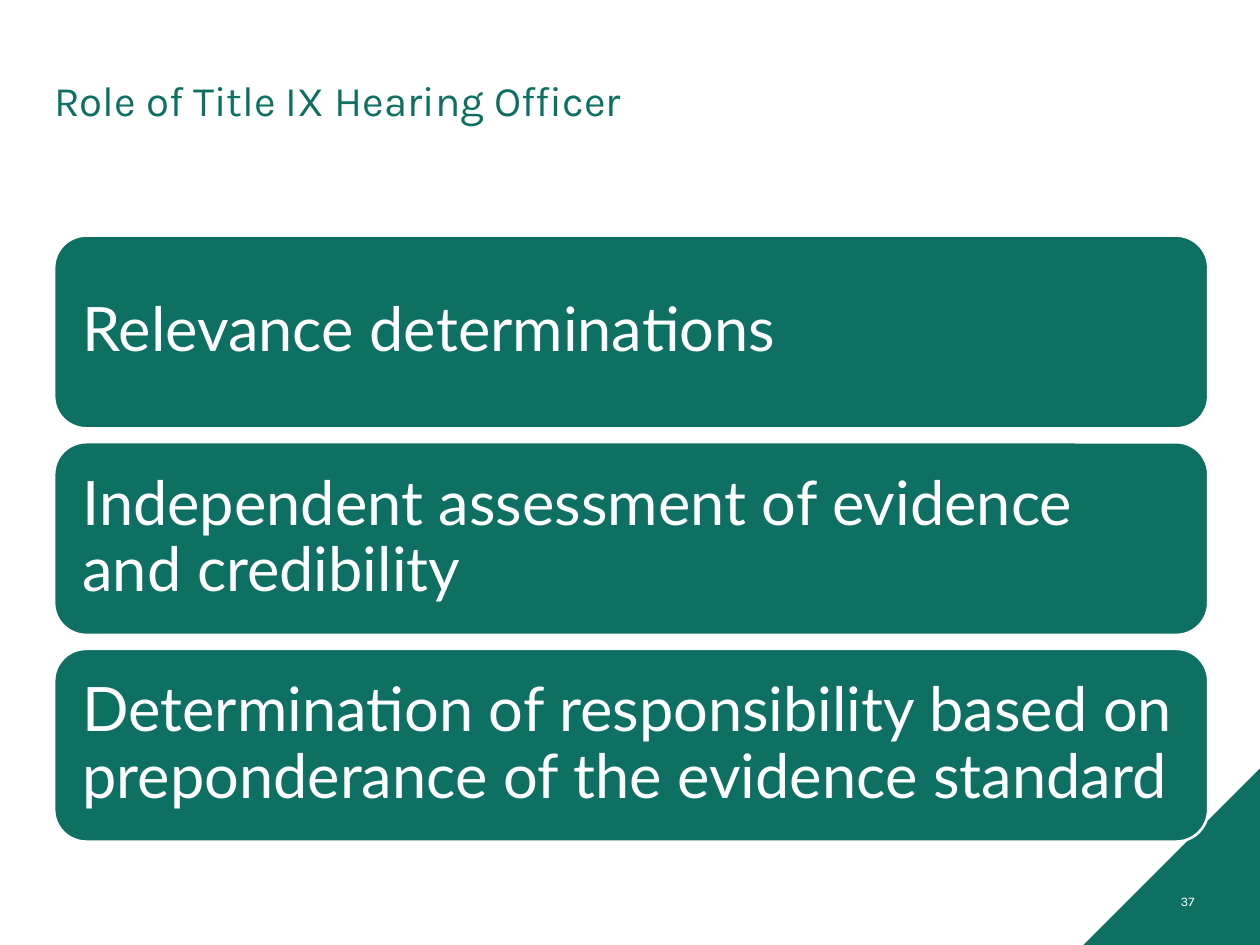
"""Build the slide on the role of a Title IX hearing officer."""
from pptx import Presentation
from pptx.dml.color import RGBColor
from pptx.enum.shapes import MSO_SHAPE
from pptx.enum.text import MSO_ANCHOR, PP_ALIGN
from pptx.util import Inches, Pt

TITLE = "Role of Title IX Hearing Officer"
DUTIES = [
    "Relevance determinations",
    "Independent assessment of evidence and credibility",
    "Determination of responsibility based on preponderance of the evidence standard",
]
PAGE_NUMBER = "37"

GREEN = RGBColor(0x0D, 0x70, 0x62)
WHITE = RGBColor(0xFF, 0xFF, 0xFF)
ROUNDED, TRIANGLE = MSO_SHAPE.ROUNDED_RECTANGLE, MSO_SHAPE.RIGHT_TRIANGLE
MIDDLE = MSO_ANCHOR.MIDDLE
LEFT, RIGHT = PP_ALIGN.LEFT, PP_ALIGN.RIGHT

SLIDE_WIDTH, SLIDE_HEIGHT = 10, 7.5
MARGIN, CONTENT_WIDTH = 0.43, 9.16
CARDS_TOP, CARD_HEIGHT, CARD_PITCH = 1.87, 1.53, 1.64
CORNER = 1.4


def write(shape, text, font_name, size, color, insets, alignment=LEFT, line_spacing=None):
    frame = shape.text_frame
    frame.word_wrap = True
    frame.vertical_anchor = MIDDLE
    horizontal, right, vertical = (Inches(inset) for inset in insets)
    frame.margin_left, frame.margin_right = horizontal, right
    frame.margin_top = frame.margin_bottom = vertical
    frame.text = text
    paragraph = frame.paragraphs[0]
    paragraph.alignment = alignment
    paragraph.line_spacing = line_spacing
    paragraph.font.name = font_name
    paragraph.font.size = Pt(size)
    paragraph.font.color.rgb = color


def add_green_shape(slide, kind, left, top, width, height):
    shape = slide.shapes.add_shape(kind, *map(Inches, (left, top, width, height)))
    shape.shadow.inherit = False
    shape.fill.solid()
    shape.fill.fore_color.rgb = GREEN
    shape.line.fill.background()
    return shape


def main():
    presentation = Presentation()
    presentation.slide_width = Inches(SLIDE_WIDTH)
    presentation.slide_height = Inches(SLIDE_HEIGHT)
    slide = presentation.slides.add_slide(presentation.slide_layouts[5])

    corner = add_green_shape(
        slide, TRIANGLE, SLIDE_WIDTH - CORNER, SLIDE_HEIGHT - CORNER, CORNER, CORNER
    )
    corner._element.spPr.xfrm.set("flipH", "1")

    title = slide.shapes.title
    title.left, title.top = Inches(MARGIN), Inches(0.4)
    title.width, title.height = Inches(CONTENT_WIDTH), Inches(0.83)
    write(title, TITLE, "Karla", 24, GREEN, (0, 0.1, 0.05), line_spacing=0.9)

    for row, duty in enumerate(DUTIES):
        top = CARDS_TOP + row * CARD_PITCH
        card = add_green_shape(slide, ROUNDED, MARGIN, top, CONTENT_WIDTH, CARD_HEIGHT)
        card.line.color.rgb = WHITE
        card.line.width = Pt(1.5)
        write(card, duty, "Lato", 35, WHITE, (0.15, 0.15, 0.15), line_spacing=0.9)

    number = slide.shapes.add_textbox(*map(Inches, (7.33, 6.95, 2.25, 0.4)))
    write(number, PAGE_NUMBER, "Karla", 7.5, WHITE, (0.1, 0.1, 0.05), RIGHT)

    presentation.save("out.pptx")


if __name__ == "__main__":
    main()
